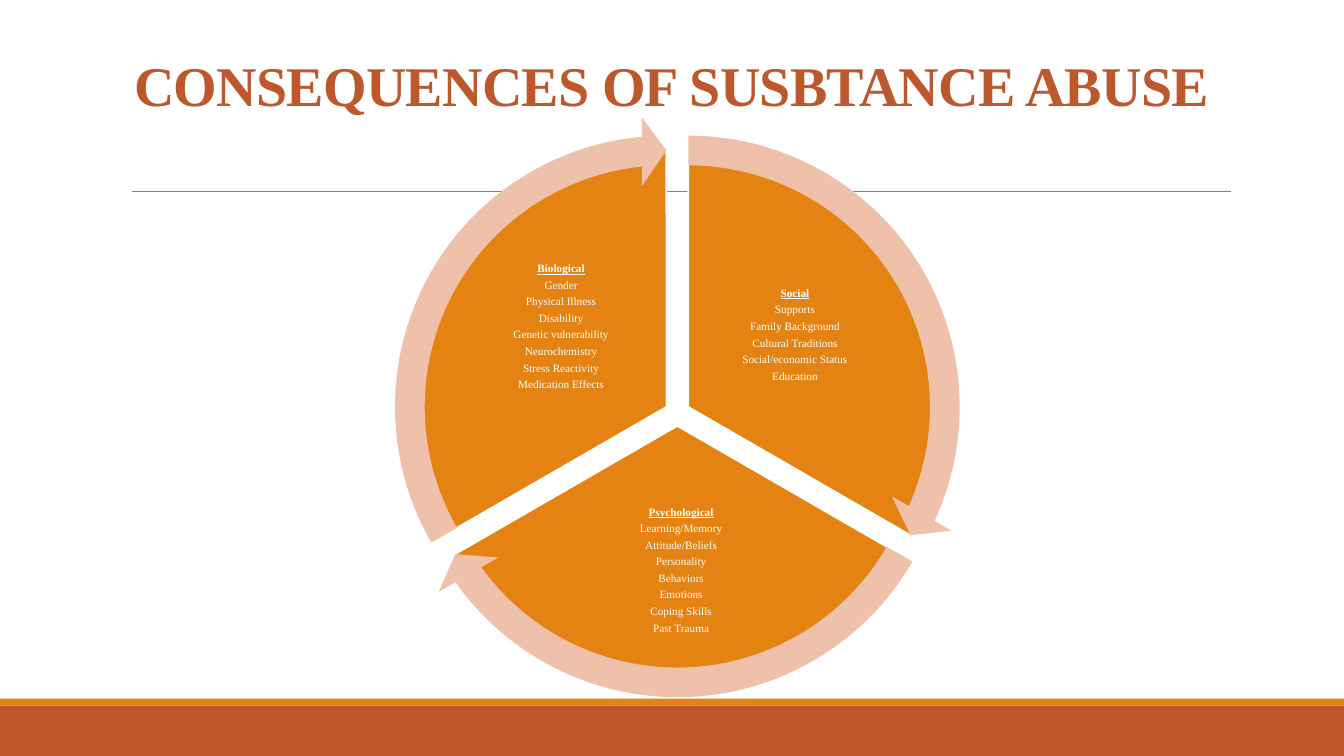
import math
from dataclasses import dataclass

import pptx
import pptx.dml.color
import pptx.enum.shapes
import pptx.enum.text
import pptx.oxml
import pptx.util

SHAPE = pptx.enum.shapes.MSO_SHAPE
ANCHOR = pptx.enum.text.MSO_ANCHOR
WIDTH = pptx.util.Inches(13.33)
HEIGHT = pptx.util.Inches(7.5)


@dataclass(frozen=True)
class Theme:
    rust: str = "BD582C"
    orange: str = "E48312"
    peach: str = "EFC1AB"
    white: str = "FFFFFF"
    grey: str = "808080"
    font: str = "Times New Roman"
    title_size: float = 40
    factor_size: float = 8
    factor_gap: float = 3.2


THEME = Theme()

# Percentages: HUB as (across, down), the others of the slide's height.
HUB = (50.4, 54.67)
PUSH = 1.67
PIE_SIZE = 68.4
ARROW_SIZE = 76.93

# Angles of adjustments are counted in units of 100000 / 60000 degrees.
DEGREES_PER_UNIT = 100000 / 60000
FULL_TURN = 216
ARROW_BAND, ARROW_HEAD, ARROW_FLARE = 0.051, 3.275, 0.059

# Start and end angle, text centre, text size, extra bottom inset, lines.
SECTORS = [
    (162, 18, (59.15, 44.33), (13.73, 20.4), 0,
     ["Social", "Supports", "Family Background", "Cultural Traditions",
      "Social/economic Status", "Education"]),
    (18, 90, (50.68, 75.47), (20.63, 17.87), 0,
     ["Psychological", "Learning/Memory", "Attitude/Beliefs", "Personality",
      "Behaviors", "Emotions", "Coping Skills", "Past Trauma"]),
    (90, 162, (41.75, 44.33), (13.73, 20.4), 0.16,
     ["Biological", "Gender", "Physical Illness", "Disability",
      "Genetic vulnerability", "Neurochemistry", "Stress Reactivity",
      "Medication Effects"]),
]


def across(percent):
    return round(WIDTH * percent / 100)


def down(percent):
    return round(HEIGHT * percent / 100)


def rgb(color):
    return pptx.dml.color.RGBColor.from_string(color)


def write_text(paragraph, text, size, color, bold=False, underline=False,
               line_spacing=0.9, gap=0, tracking=None):
    paragraph.alignment = pptx.enum.text.PP_ALIGN.CENTER
    paragraph.line_spacing = line_spacing
    paragraph.space_before = pptx.util.Pt(0)
    paragraph.space_after = pptx.util.Pt(gap)
    run = paragraph.add_run()
    run.text = text
    run.font.name = THEME.font
    run.font.size = pptx.util.Pt(size)
    run.font.bold = bold
    run.font.underline = underline
    run.font.color.rgb = rgb(color)
    if tracking is not None:
        run.font._element.set("spc", str(round(tracking * 100)))


def set_frame(frame, anchor, inset_x, inset_y, extra_bottom=0):
    frame.word_wrap = True
    frame.auto_size = pptx.enum.text.MSO_AUTO_SIZE.NONE
    frame.vertical_anchor = anchor
    frame.margin_left = frame.margin_right = pptx.util.Inches(inset_x)
    frame.margin_top = pptx.util.Inches(inset_y)
    frame.margin_bottom = pptx.util.Inches(inset_y + extra_bottom)


def add_filled(slide, preset, box, fill, outline=None):
    shape = slide.shapes.add_shape(preset, *box)
    shape.shadow.inherit = False
    shape.fill.solid()
    shape.fill.fore_color.rgb = rgb(fill)
    if outline:
        shape.line.color.rgb = rgb(outline)
        shape.line.width = pptx.util.Pt(1.25)
    else:
        shape.line.fill.background()
    return shape


def add_rule(slide, left, right, top):
    rule = slide.shapes.add_connector(
        pptx.enum.shapes.MSO_CONNECTOR.STRAIGHT,
        across(left), down(top), across(right), down(top))
    rule.line.color.rgb = rgb(THEME.grey)
    rule.line.width = pptx.util.Pt(0.5)
    pptx.oxml.ns  # namespace helpers used below
    rule._element.spPr.append(pptx.oxml.parse_xml(
        "<a:effectLst %s/>" % pptx.oxml.ns.nsdecls("a")))


def add_title(slide, text):
    title = slide.shapes.title
    title.left, title.top = across(9), down(4.13)
    title.width, title.height = across(81.92), down(12.13)
    set_frame(title.text_frame, ANCHOR.BOTTOM, 0.1, 0.05)
    write_text(title.text_frame.paragraphs[0], text, THEME.title_size,
               THEME.rust, bold=True, line_spacing=0.85, tracking=-0.5)


def sector_box(start, end, size):
    """Square around the hub, pushed outwards along the sector's middle."""
    sweep = (end - start) % FULL_TURN
    middle = math.radians((start + sweep / 2) * DEGREES_PER_UNIT)
    side = down(size)
    left = across(HUB[0]) + down(PUSH) * math.cos(middle) - side / 2
    top = down(HUB[1]) + down(PUSH) * math.sin(middle) - side / 2
    return round(left), round(top), side, side


def set_adjustments(shape, *values):
    for index, value in enumerate(values):
        shape.adjustments[index] = value


def add_sector(slide, start, end):
    sector = add_filled(slide, SHAPE.PIE, sector_box(start, end, PIE_SIZE),
                        THEME.orange, outline=THEME.white)
    set_adjustments(sector, start, end)


def add_arrow(slide, start, end):
    arrow = add_filled(slide, SHAPE.CIRCULAR_ARROW,
                       sector_box(start, end, ARROW_SIZE), THEME.peach)
    set_adjustments(arrow, ARROW_BAND, ARROW_HEAD, end - ARROW_HEAD, start,
                    ARROW_FLARE)


def add_factors(slide, center, size, extra_bottom, lines):
    """Underlined heading with its list of factors below."""
    width, height = across(size[0]), down(size[1])
    box = slide.shapes.add_textbox(across(center[0]) - width // 2,
                                   down(center[1]) - height // 2,
                                   width, height)
    frame = box.text_frame
    set_frame(frame, ANCHOR.MIDDLE, 0.01, 0.01, extra_bottom)
    for index, line in enumerate(lines):
        heading = index == 0
        paragraph = frame.paragraphs[0] if heading else frame.add_paragraph()
        write_text(paragraph, line, THEME.factor_size, THEME.white,
                   bold=heading, underline=heading, gap=THEME.factor_gap)


def main():
    deck = pptx.Presentation()
    deck.slide_width, deck.slide_height = WIDTH, HEIGHT
    slide = deck.slides.add_slide(deck.slide_layouts[5])

    for top, height, color in [(93.33, 6.67, THEME.rust),
                               (92.4, 0.93, THEME.orange)]:
        add_filled(slide, SHAPE.RECTANGLE,
                   (0, down(top), WIDTH, down(height)), color)
    add_rule(slide, 9.82, 91.6, 25.33)
    add_title(slide, "CONSEQUENCES OF SUSBTANCE ABUSE")

    for start, end, center, size, extra_bottom, lines in SECTORS:
        add_sector(slide, start, end)
        add_factors(slide, center, size, extra_bottom, lines)
    for start, end, *_ in SECTORS:
        add_arrow(slide, start, end)

    deck.save("out.pptx")


if __name__ == "__main__":
    main()
